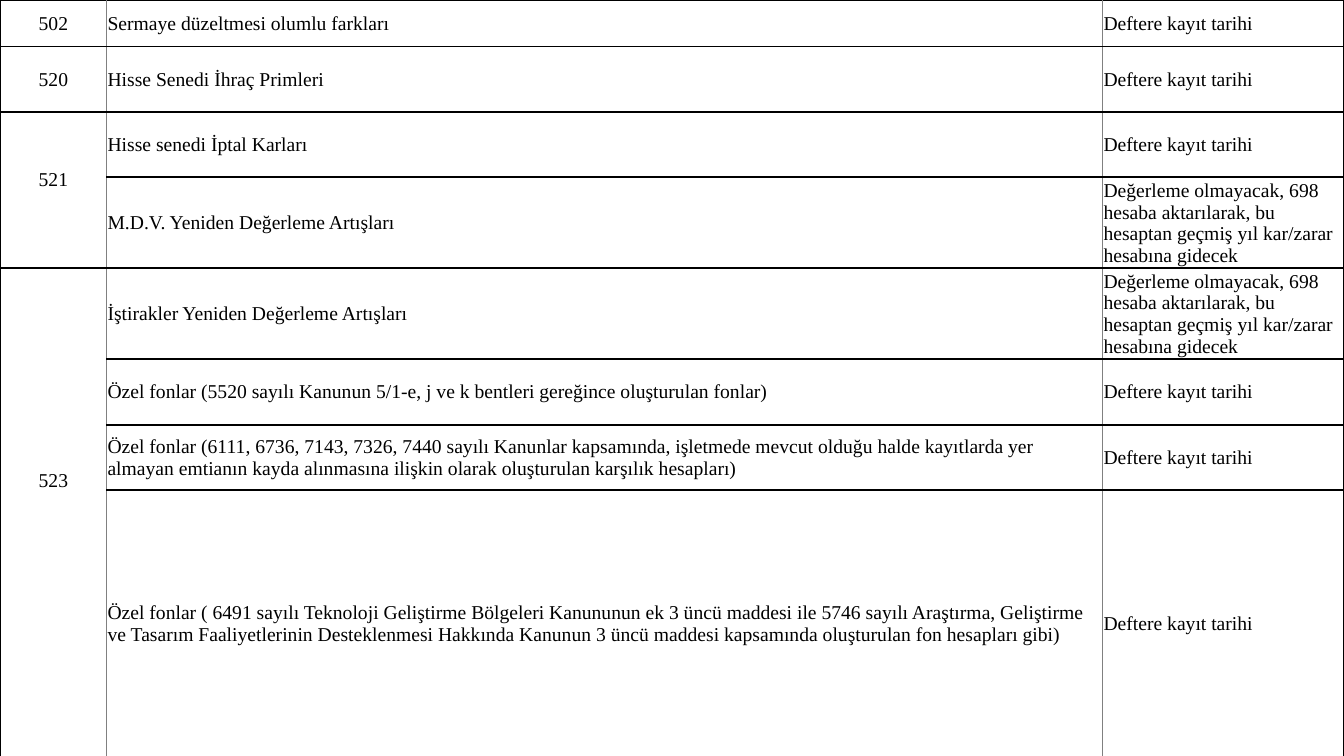
from dataclasses import dataclass

from lxml.etree import SubElement
from pptx import Presentation
from pptx.dml.color import RGBColor
from pptx.enum.text import MSO_ANCHOR as Anchor, PP_ALIGN as Align
from pptx.oxml.ns import qn
from pptx.util import Cm, Pt


@dataclass(frozen=True)
class Theme:
    font: str = "Times New Roman"
    size: int = 14
    text: str = "000000"
    rule: str = "000000"
    divider: str = "808080"
    rule_width: float = 1.5
    divider_width: float = 0.5


theme = Theme()


def set_border(cell, side, color, width):
    ln = SubElement(cell._tc.get_or_add_tcPr(), qn(f"a:ln{side}"), w=str(Pt(width)))
    fill = SubElement(ln, qn("a:solidFill"))
    SubElement(fill, qn("a:srgbClr"), val=color)


# Content: account code, account name, valuation basis, row height in cm
BOOKING_DATE = "Deftere kayıt tarihi"
NO_VALUATION = ("Değerleme olmayacak, 698 hesaba aktarılarak, bu hesaptan "
                "geçmiş yıl kar/zarar hesabına gidecek")
rows = [
    ("502", "Sermaye düzeltmesi olumlu farkları", BOOKING_DATE, 1.17),
    ("520", "Hisse Senedi İhraç Primleri", BOOKING_DATE, 1.65),
    ("521", "Hisse senedi İptal Karları", BOOKING_DATE, 1.65),
    ("", "M.D.V. Yeniden Değerleme Artışları", NO_VALUATION, 2.29),
    ("523", "İştirakler Yeniden Değerleme Artışları", NO_VALUATION, 2.29),
    ("", "Özel fonlar (5520 sayılı Kanunun 5/1-e, j ve k bentleri gereğince "
         "oluşturulan fonlar)", BOOKING_DATE, 1.65),
    ("", "Özel fonlar (6111, 6736, 7143, 7326, 7440 sayılı Kanunlar kapsamında, "
         "işletmede mevcut olduğu halde kayıtlarda yer almayan emtianın kayda "
         "alınmasına ilişkin olarak oluşturulan karşılık hesapları)",
     BOOKING_DATE, 1.65),
    ("", "Özel fonlar ( 6491 sayılı Teknoloji Geliştirme Bölgeleri Kanununun ek 3 "
         "üncü maddesi ile 5746 sayılı Araştırma, Geliştirme ve Tasarım "
         "Faaliyetlerinin Desteklenmesi Hakkında Kanunun 3 üncü maddesi kapsamında "
         "oluşturulan fon hesapları gibi)", BOOKING_DATE, 6.73),
]
col_widths = [2.69, 25.1, 6.07]
code_spans = {2: 2, 4: 4}  # first row: number of rows sharing the code
LINE_HEIGHT = 0.55

# Slide
prs = Presentation()
prs.slide_width, prs.slide_height = Cm(33.87), Cm(19.05)
s = prs.slides.add_slide(prs.slide_layouts[6])

# Table grid
table = s.shapes.add_table(len(rows), len(col_widths), 0, 0, Cm(sum(col_widths)),
                           Cm(sum(row[-1] for row in rows))).table
table.first_row = table.horz_banding = False
for col, width in zip(table.columns, col_widths):
    col.width = Cm(width)

# Cells
last_col = len(col_widths) - 1
for i, (*texts, height) in enumerate(rows):
    table.rows[i].height = Cm(height)
    for j, text in enumerate(texts):
        cell = table.cell(i, j)
        cell.vertical_anchor = Anchor.MIDDLE
        cell.margin_left = cell.margin_right = cell.margin_top = Cm(0.02)
        cell.margin_bottom = 0
        for side in "LRTB":
            if side in "TB" or (side, j) in (("L", 0), ("R", last_col)):
                set_border(cell, side, theme.rule, theme.rule_width)
            else:
                set_border(cell, side, theme.divider, theme.divider_width)
        cell.fill.background()
        p = cell.text_frame.paragraphs[0]
        p.text = text
        p.alignment = Align.CENTER if j == 0 else Align.LEFT
        p.font.name, p.font.size = theme.font, Pt(theme.size)
        p.font.color.rgb = RGBColor.from_string(theme.text)

# Shared codes sit above the middle of their merged rows
for first, count in code_spans.items():
    cell = table.cell(first, 0)
    cell.merge(table.cell(first + count - 1, 0))
    cell.margin_bottom = Cm(LINE_HEIGHT * (count - 1))

prs.save("out.pptx")
